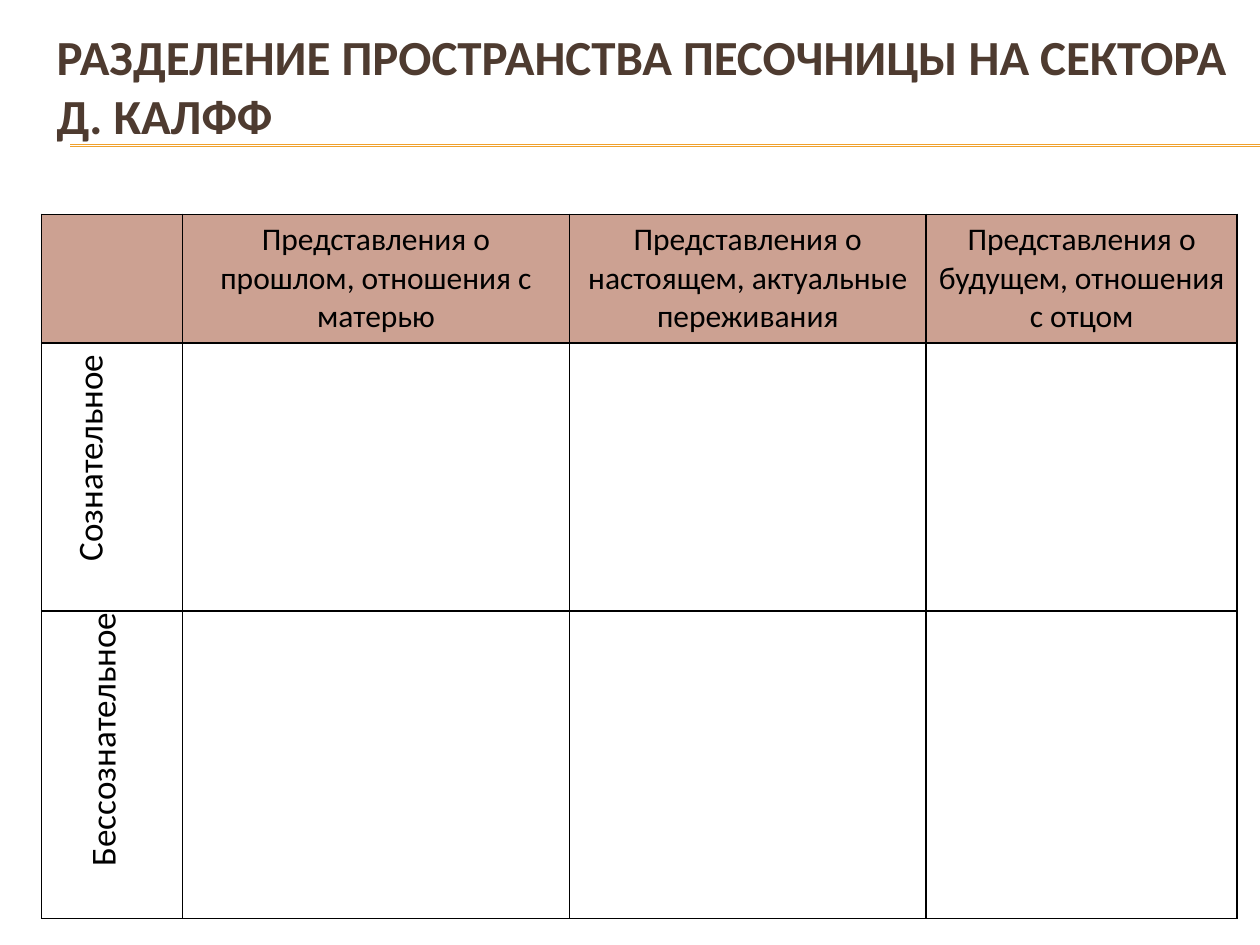
"""Build the slide with the sandbox sector table."""
from lxml.etree import SubElement
from pptx import Presentation
from pptx.dml.color import RGBColor
from pptx.enum.shapes import MSO_CONNECTOR as Connector
from pptx.enum.text import MSO_ANCHOR as Anchor, PP_ALIGN as Align
from pptx.oxml.ns import qn
from pptx.util import Cm, Pt

TITLE = "РАЗДЕЛЕНИЕ ПРОСТРАНСТВА ПЕСОЧНИЦЫ НА СЕКТОРА Д. КАЛФФ"
HEADERS = [
    "",
    "Представления о прошлом, отношения с матерью",
    "Представления о настоящем, актуальные переживания",
    "Представления о будущем, отношения с отцом",
]
LEVELS = [
    ("Сознательное", (1.24, 6.53, 1.37, 5.41)),
    ("Бессознательное", (1.5, 11.91, 1.37, 6)),
]
COLUMN_WIDTHS = [2.84, 7.8, 7.19, 6.27]
ROW_HEIGHTS = [2.59, 5.41, 6.2]
TABLE_LEFT, TABLE_TOP = 0.84, 4.32
RULE_LEFT, RULE_TOPS = 1.42, (2.92, 2.95)
SLIDE_WIDTH, SLIDE_HEIGHT = 25.4, 19.05
BLACK, WHITE, BROWN, ORANGE, ROSE = "000000", "FFFFFF", "4E3B30", "F0A22E", "CCA192"


def color(value):
    return RGBColor.from_string(value)


def write(frame, text, size=18, ink=BLACK, bold=False, align=Align.CENTER):
    paragraph = frame.paragraphs[0]
    paragraph.alignment = align
    run = paragraph.add_run()
    run.text = text
    run.font.name = "Calibri"
    run.font.size = Pt(size)
    run.font.bold = bold
    run.font.color.rgb = color(ink)


def add_frame(slide, box, anchor=Anchor.TOP):
    frame = slide.shapes.add_textbox(*map(Cm, box)).text_frame
    frame.word_wrap = True
    frame.vertical_anchor = anchor
    return frame


def add_rule(slide, top):
    rule = slide.shapes.add_connector(
        Connector.STRAIGHT, Cm(RULE_LEFT), Cm(top), Cm(SLIDE_WIDTH), Cm(top))
    rule.line.color.rgb = color(ORANGE)
    rule.line.width = Pt(0.75)
    SubElement(rule.element.spPr, qn("a:effectLst"))


def style_cell(cell, background):
    properties = cell._tc.get_or_add_tcPr()
    for side in ("lnL", "lnR", "lnT", "lnB"):
        border = SubElement(properties, qn(f"a:{side}"), w=str(Pt(1)))
        SubElement(SubElement(border, qn("a:solidFill")), qn("a:srgbClr"), val=BLACK)
    cell.fill.solid()
    cell.fill.fore_color.rgb = color(background)


def add_sectors(slide):
    table = slide.shapes.add_table(
        len(ROW_HEIGHTS), len(COLUMN_WIDTHS), Cm(TABLE_LEFT), Cm(TABLE_TOP),
        Cm(sum(COLUMN_WIDTHS)), Cm(sum(ROW_HEIGHTS))).table
    for column, width in zip(table.columns, COLUMN_WIDTHS):
        column.width = Cm(width)
    for index, (row, height) in enumerate(zip(table.rows, ROW_HEIGHTS)):
        row.height = Cm(height)
        for cell in row.cells:
            style_cell(cell, WHITE if index else ROSE)
    for cell, header in zip(table.rows[0].cells, HEADERS):
        if header:
            write(cell.text_frame, header)


def main():
    deck = Presentation()
    deck.slide_width, deck.slide_height = Cm(SLIDE_WIDTH), Cm(SLIDE_HEIGHT)
    slide = deck.slides.add_slide(deck.slide_layouts[6])
    for top in RULE_TOPS:
        add_rule(slide, top)
    heading = add_frame(slide, (0.89, 0.53, 24.2, 2.39), anchor=Anchor.MIDDLE)
    write(heading, TITLE, size=28, ink=BROWN, bold=True, align=Align.LEFT)
    add_sectors(slide)
    for level, box in LEVELS:
        frame = add_frame(slide, box)
        frame._txBody.bodyPr.set("vert", "vert270")
        write(frame, level, size=20)
    deck.save("out.pptx")


if __name__ == "__main__":
    main()
